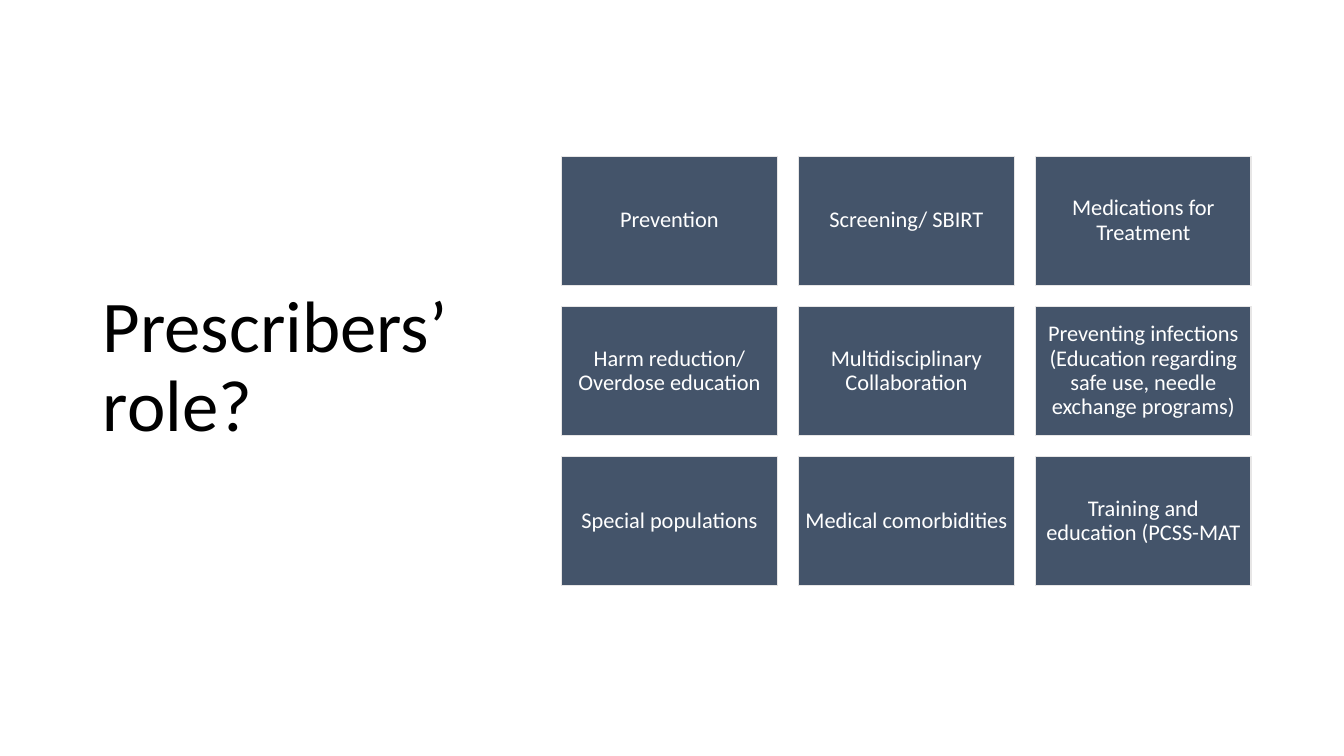
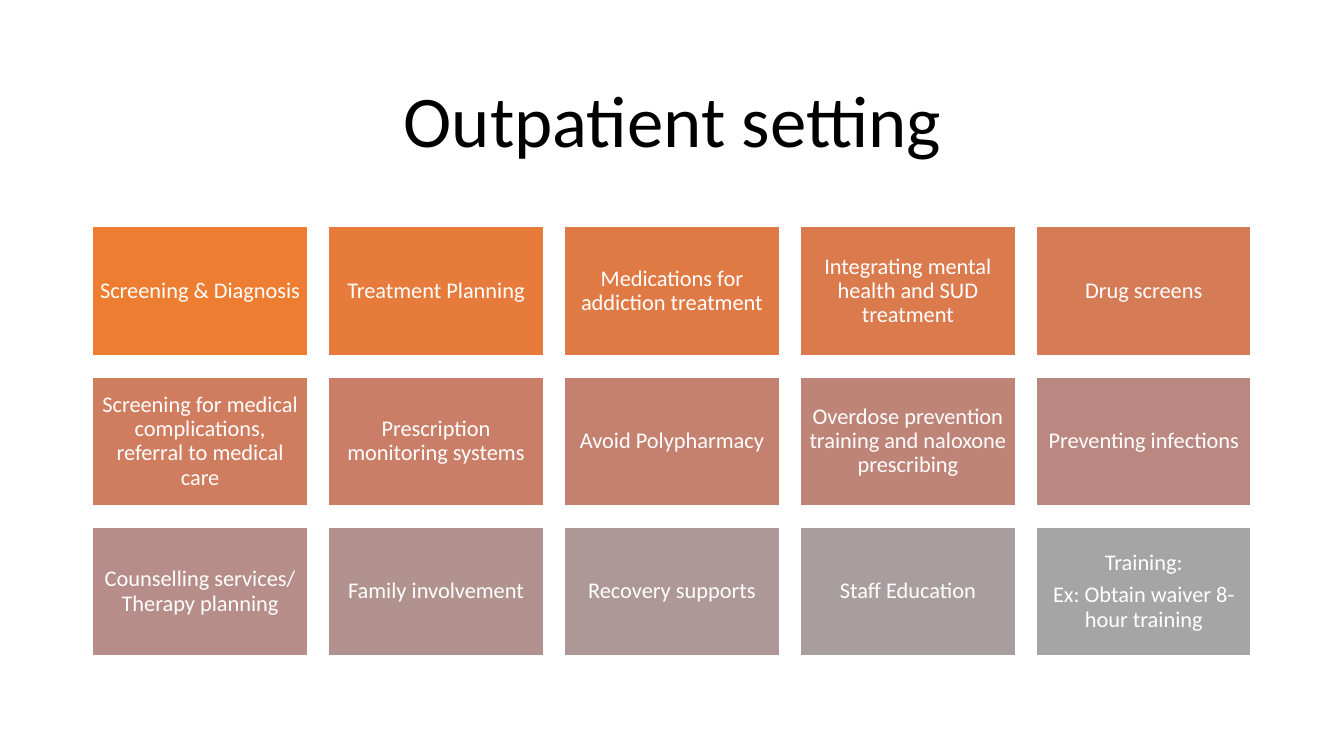
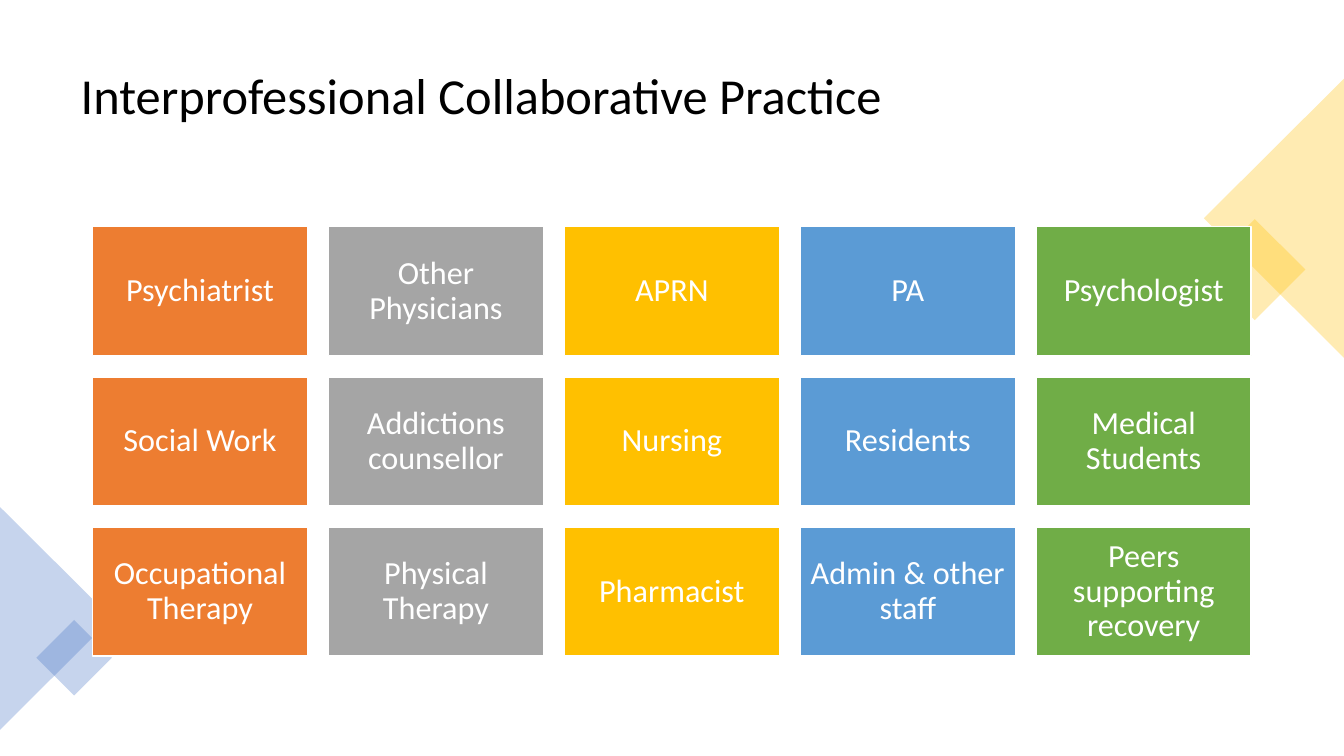
from colorsys import hls_to_rgb, rgb_to_hls
from dataclasses import dataclass

from lxml.etree import SubElement
from pptx import Presentation
from pptx.dml.color import RGBColor
from pptx.enum.shapes import MSO_SHAPE
from pptx.enum.text import MSO_ANCHOR, MSO_AUTO_SIZE, PP_ALIGN
from pptx.oxml.ns import qn
from pptx.slide import Slide
from pptx.text.text import TextFrame
from pptx.util import Emu, Pt

PX = 9144  # 100 px to the inch
WIDE, HIGH = 1333, 750
FONT = "Calibri"
BLACK, WHITE = "000000", "FFFFFF"
SLATE, PALE = "44546A", "E7E6E6"
ORANGE, GRAY, GOLD = "ED7D31", "A5A5A5", "FFC000"
SKY, GREEN, BLUE = "5B9BD5", "70AD47", "4472C4"
GAP, TILE_H = 21, 128


@dataclass(frozen=True)
class Box:
    x: int
    y: int
    w: int
    h: int

    def emu(self) -> tuple[Emu, Emu, Emu, Emu]:
        return Emu(self.x * PX), Emu(self.y * PX), Emu(self.w * PX), Emu(self.h * PX)


@dataclass(frozen=True)
class Grid:
    """Equal tiles, filled row by row from the box of the first one."""
    first: Box
    cols: int
    size: int
    inset: int
    edge: str
    fills: list[str]
    texts: list[str]


@dataclass(frozen=True)
class Accent:
    kind: MSO_SHAPE
    box: Box
    turn: int
    fill: str


@dataclass(frozen=True)
class Page:
    title: str
    box: Box
    size: int
    align: PP_ALIGN
    grid: Grid
    accents: tuple[Accent, ...] = ()


def color(code: str) -> RGBColor:
    return RGBColor.from_string(code)


def blend(start: str, end: str, count: int) -> list[str]:
    """Colours from start to a gray end, in even steps of hue, light and depth."""
    first, last = (rgb_to_hls(*(part / 255 for part in color(code)))
                   for code in (start, end))
    codes = []
    for step in range(count):
        share = step / (count - 1)
        tone = (a + (b - a) * share for a, b in zip(first, last))
        codes.append("".join(f"{round(part * 255):02X}" for part in hls_to_rgb(*tone)))
    return codes


def write(frame: TextFrame, text: str, size: int, code: str, align: PP_ALIGN) -> None:
    frame.text = text
    frame.word_wrap = True
    frame.auto_size = MSO_AUTO_SIZE.NONE
    frame.vertical_anchor = MSO_ANCHOR.MIDDLE
    for par in frame.paragraphs:
        par.alignment = align
        par.line_spacing = 0.9
        par.font.name = FONT
        par.font.size = Pt(size)
        par.font.color.rgb = color(code)


def add_title(slide: Slide, page: Page) -> None:
    title = slide.shapes.title
    title.left, title.top, title.width, title.height = page.box.emu()
    write(title.text_frame, page.title, page.size, BLACK, page.align)


def add_accent(slide: Slide, accent: Accent) -> None:
    shape = slide.shapes.add_shape(accent.kind, *accent.box.emu())
    shape.rotation = accent.turn
    shape.shadow.inherit = False
    shape.line.fill.background()
    shape.fill.solid()
    shape.fill.fore_color.rgb = color(accent.fill)
    tint = shape.fill._xPr.find(qn("a:solidFill"))[0]
    SubElement(tint, qn("a:alpha"), val="30000")


def add_tile(slide: Slide, grid: Grid, box: Box, fill: str, text: str) -> None:
    tile = slide.shapes.add_shape(MSO_SHAPE.RECTANGLE, *box.emu())
    tile.shadow.inherit = False
    tile.fill.solid()
    tile.fill.fore_color.rgb = color(fill)
    tile.line.color.rgb = color(grid.edge)
    tile.line.width = Pt(1)
    frame = tile.text_frame
    frame.margin_left = frame.margin_right = Emu(grid.inset * PX)
    frame.margin_top = frame.margin_bottom = Emu(grid.inset * PX)
    write(frame, text, grid.size, WHITE, PP_ALIGN.CENTER)
    for par in frame.paragraphs:
        par.space_after = Pt(0.35 * grid.size)


def add_grid(slide: Slide, grid: Grid) -> None:
    first = grid.first
    for spot, (fill, text) in enumerate(zip(grid.fills, grid.texts)):
        row, col = divmod(spot, grid.cols)
        box = Box(first.x + col * (first.w + GAP), first.y + row * (first.h + GAP),
                  first.w, first.h)
        add_tile(slide, grid, box, fill, text)


ROLES = [
    "Prevention", "Screening/ SBIRT", "Medications for Treatment",
    "Harm reduction/ Overdose education", "Multidisciplinary Collaboration",
    "Preventing infections (Education regarding safe use, needle exchange programs)",
    "Special populations", "Medical comorbidities",
    "Training and education (PCSS-MAT",
]
TASKS = [
    "Screening & Diagnosis", "Treatment Planning",
    "Medications for addiction treatment",
    "Integrating mental health and SUD treatment", "Drug screens",
    "Screening for medical complications, referral to medical care",
    "Prescription monitoring systems", "Avoid Polypharmacy",
    "Overdose prevention training and naloxone prescribing",
    "Preventing infections",
    "Counselling services/ Therapy planning", "Family involvement",
    "Recovery supports", "Staff Education",
    "Training:\nEx: Obtain waiver 8-hour training",
]
TEAM = [
    "Psychiatrist", "Other Physicians", "APRN", "PA", "Psychologist",
    "Social Work", "Addictions counsellor", "Nursing", "Residents",
    "Medical Students",
    "Occupational Therapy", "Physical Therapy", "Pharmacist",
    "Admin & other staff", "Peers supporting recovery",
]
WIDE_TILE = Box(92, 225, 213, TILE_H)
PAGES = [
    Page("Prescribers’ role?", Box(92, 61, 369, 609), 52, PP_ALIGN.LEFT,
         Grid(Box(557, 155, 214, TILE_H), 3, 16, 6, PALE, [SLATE] * len(ROLES), ROLES)),
    Page("Outpatient setting", Box(92, 61, 1150, 124), 52, PP_ALIGN.CENTER,
         Grid(WIDE_TILE, 5, 16, 6, WHITE, blend(ORANGE, GRAY, len(TASKS)), TASKS)),
    Page("Interprofessional Collaborative Practice", Box(70, 35, 1193, 124), 36,
         PP_ALIGN.LEFT,
         Grid(WIDE_TILE, 5, 23, 10, WHITE, [ORANGE, GRAY, GOLD, SKY, GREEN] * 3, TEAM),
         (Accent(MSO_SHAPE.RECTANGLE, Box(1209, 232, 71, 71), 45, GOLD),
          Accent(MSO_SHAPE.ISOSCELES_TRIANGLE, Box(1125, 147, 277, 139), 270, GOLD),
          Accent(MSO_SHAPE.ISOSCELES_TRIANGLE, Box(-55, 558, 221, 111), 90, BLUE),
          Accent(MSO_SHAPE.RECTANGLE, Box(47, 626, 53, 53), 45, BLUE))),
]


def main() -> None:
    deck = Presentation()
    deck.slide_width, deck.slide_height = Emu(WIDE * PX), Emu(HIGH * PX)
    title_only = deck.slide_layouts[5]
    for page in PAGES:
        slide = deck.slides.add_slide(title_only)
        add_title(slide, page)
        for accent in page.accents:
            add_accent(slide, accent)
        add_grid(slide, page.grid)
    deck.save("out.pptx")


if __name__ == "__main__":
    main()
